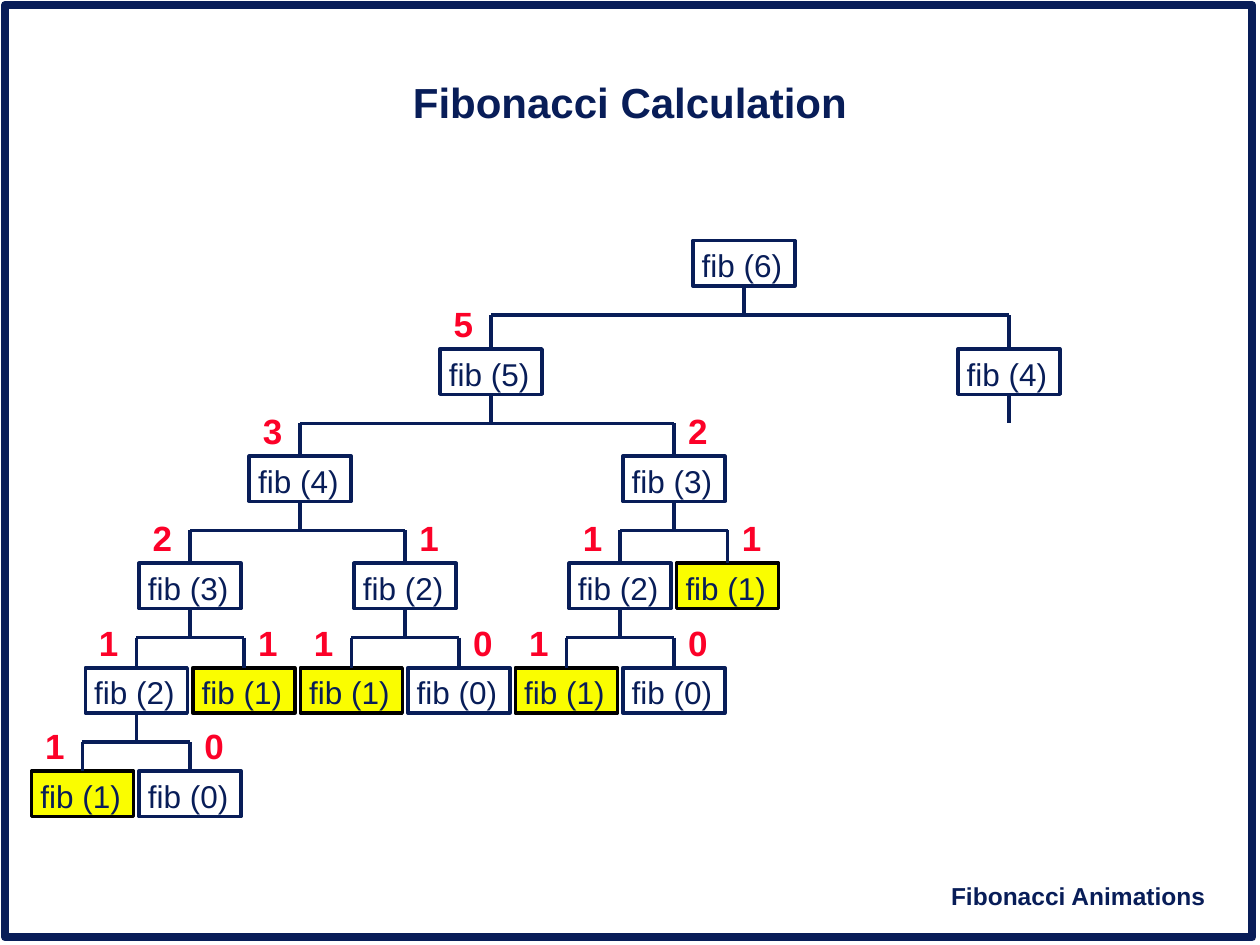
from dataclasses import dataclass
from typing import Optional

from pptx import Presentation
from pptx.dml.color import RGBColor
from pptx.enum.shapes import MSO_CONNECTOR, MSO_SHAPE
from pptx.enum.text import MSO_ANCHOR, MSO_AUTO_SIZE, PP_ALIGN
from pptx.oxml import parse_xml
from pptx.oxml.ns import nsdecls
from pptx.util import Inches, Pt

NAVY = RGBColor(0x08, 0x1D, 0x58)
RED = RGBColor(0xFC, 0x01, 0x28)
YELLOW = RGBColor(0xFA, 0xFD, 0x00)
WHITE = RGBColor(0xFF, 0xFF, 0xFF)
BLACK = RGBColor(0x00, 0x00, 0x00)

# Grid of the call tree, in inches
FIRST_COLUMN = 0.25
COLUMN_STEP = (5.37 - FIRST_COLUMN) / 12
ROW_TOPS = (1.91, 2.77, 3.62, 4.47, 5.3, 6.12)
BOX_WIDTH, BOX_HEIGHT = 0.81, 0.36
STEM = 0.23
TOP, BOTTOM = 0, 2


@dataclass
class Call:
    n: int
    column: float
    result: Optional[int] = None
    left: Optional["Call"] = None
    right: Optional["Call"] = None


def base_case_pair(column, result=1):
    """A fib (2) call with its two base cases on either side."""
    return Call(2, column, result, Call(1, column - 1, 1), Call(0, column + 1, 0))


CALL_TREE = Call(
    6, 12.3, None,
    Call(5, 7.6, 5,
         Call(4, 4.05, 3,
              Call(3, 2, 2, base_case_pair(1), Call(1, 3, 1)),
              base_case_pair(6)),
         Call(3, 11, 2, base_case_pair(10), Call(1, 12, 1))),
    Call(4, 17.23))


def add_text(paragraph, text, size, color, bold=False):
    run = paragraph.add_run()
    run.text = text
    run.font.name = "Arial"
    run.font.size = Pt(size)
    run.font.bold = bold
    run.font.color.rgb = color


def add_label(slide, left, top, width, height, text, size, color):
    label = slide.shapes.add_textbox(*map(Inches, (left, top, width, height)))
    frame = label.text_frame
    frame.word_wrap = False
    frame.auto_size = MSO_AUTO_SIZE.SHAPE_TO_FIT_TEXT
    add_text(frame.paragraphs[0], text, size, color, bold=True)


def add_rectangle(slide, left, top, width, height, fill, line, weight):
    rectangle = slide.shapes.add_shape(
        MSO_SHAPE.RECTANGLE, *map(Inches, (left, top, width, height)))
    rectangle.shadow.inherit = False
    if fill is None:
        rectangle.fill.background()
    else:
        rectangle.fill.solid()
        rectangle.fill.fore_color.rgb = fill
    rectangle.line.color.rgb = line
    rectangle.line.width = Pt(weight)
    return rectangle


def add_line(slide, x1, y1, x2, y2):
    line = slide.shapes.add_connector(MSO_CONNECTOR.STRAIGHT, x1, y1, x2, y2)
    line.line.color.rgb = NAVY
    line.line.width = Pt(2)
    line._element.spPr.append(parse_xml(f"<a:effectLst {nsdecls('a')}/>"))
    return line


def add_call_box(slide, call, row):
    is_one = call.n == 1
    box = add_rectangle(
        slide, FIRST_COLUMN + call.column * COLUMN_STEP, ROW_TOPS[row],
        BOX_WIDTH, BOX_HEIGHT, YELLOW if is_one else WHITE,
        BLACK if is_one else NAVY, 2)
    frame = box.text_frame
    frame.word_wrap = False
    frame.vertical_anchor = MSO_ANCHOR.MIDDLE
    frame.margin_left = frame.margin_bottom = 0
    frame.margin_right = frame.margin_top = Inches(0.03)
    frame.paragraphs[0].alignment = PP_ALIGN.CENTER
    add_text(frame.paragraphs[0], f"fib ({call.n})", 18, NAVY)
    return box


def center_x(box):
    return box.left + box.width // 2


def add_call(slide, call, row=0, label_shift=0.01):
    box = add_call_box(slide, call, row)

    # Returned value above the box
    if call.result is not None:
        add_label(slide, box.left.inches + label_shift, ROW_TOPS[row] - 0.42,
                  0.35, 0.43, str(call.result), 20, RED)

    # Stem below every call that recurses
    if call.n > 1:
        bar_y = box.top + box.height + Inches(STEM)
        stem = add_line(slide, center_x(box), box.top + box.height,
                        center_x(box), bar_y)
        stem.begin_connect(box, BOTTOM)

    # Bar and drops to the two inner calls
    if call.left and call.right:
        inner = (add_call(slide, call.left, row + 1),
                 add_call(slide, call.right, row + 1, label_shift=0.42))
        add_line(slide, center_x(inner[1]), bar_y, center_x(inner[0]), bar_y)
        for child in inner:
            drop = add_line(slide, center_x(child), bar_y,
                            center_x(child), child.top)
            drop.end_connect(child, TOP)
    return box


def add_title(slide, text):
    title = slide.shapes.title
    title.left, title.top, title.width, title.height = map(
        Inches, (1.28, 0.58, 7.44, 0.5))
    title.text_frame.vertical_anchor = MSO_ANCHOR.MIDDLE
    paragraph = title.text_frame.paragraphs[0]
    paragraph.alignment = PP_ALIGN.CENTER
    paragraph.line_spacing = 0.9
    add_text(paragraph, text, 24, NAVY, bold=True)


def main():
    deck = Presentation()
    deck.slide_width, deck.slide_height = Inches(10), Inches(7.5)
    slide = deck.slides.add_slide(deck.slide_layouts[5])

    # Page frame, footer and title
    add_rectangle(slide, 0.04, 0.04, 9.9, 7.4, None, NAVY, 4.5)
    add_label(slide, 7.45, 6.94, 2.23, 0.33, "Fibonacci Animations", 14, NAVY)
    add_title(slide, "Fibonacci Calculation")

    # Recursive calls
    add_call(slide, CALL_TREE)
    deck.save("out.pptx")


if __name__ == "__main__":
    main()
